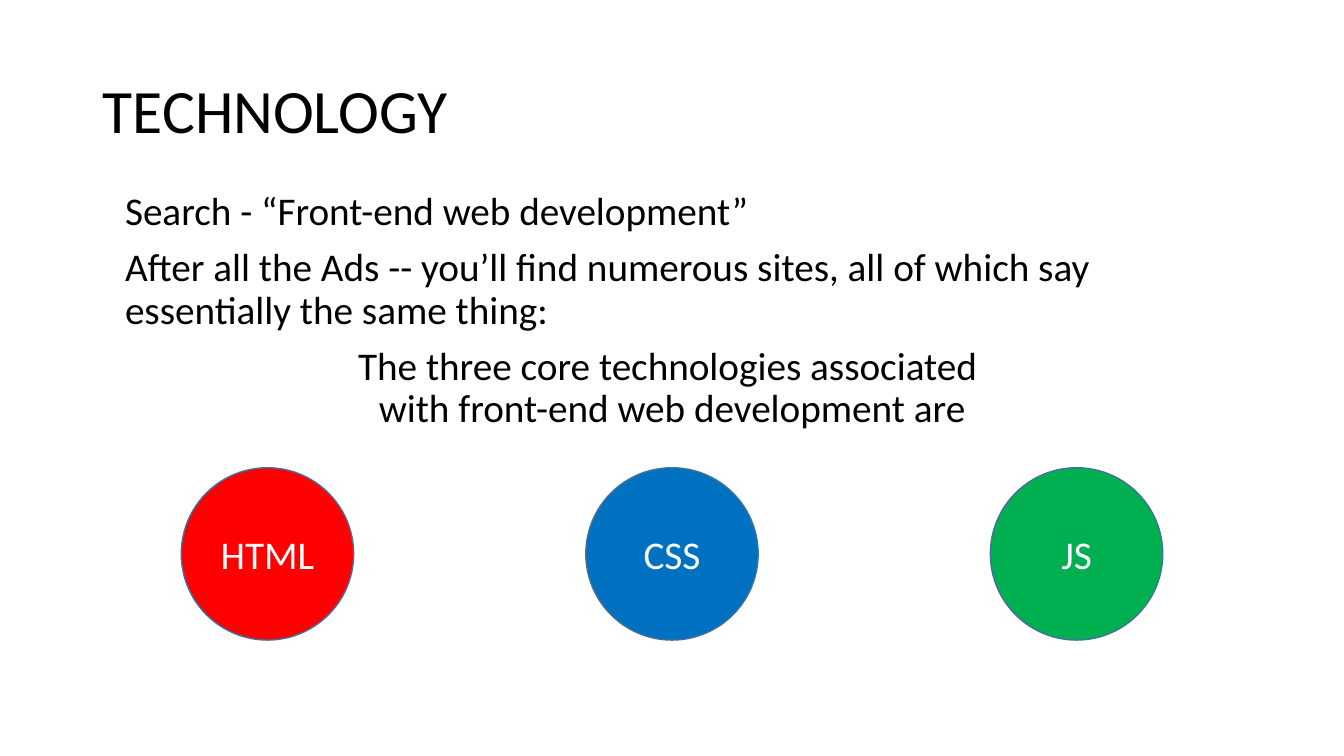
from lxml.etree import SubElement
from pptx import Presentation
from pptx.dml.color import RGBColor
from pptx.enum.shapes import MSO_SHAPE
from pptx.enum.text import MSO_ANCHOR, MSO_AUTO_SIZE, PP_ALIGN
from pptx.oxml.ns import qn
from pptx.util import Inches, Pt

FONT = "Calibri"
BLACK = RGBColor(0x00, 0x00, 0x00)
WHITE = RGBColor(0xFF, 0xFF, 0xFF)
OUTLINE = RGBColor(0x41, 0x71, 0x9C)
RED = RGBColor(0xFF, 0x00, 0x00)
BLUE = RGBColor(0x00, 0x70, 0xC0)
GREEN = RGBColor(0x00, 0xB0, 0x50)

SLIDE_WIDTH, SLIDE_HEIGHT = 13.33, 7.5
TITLE_BOX = (0.92, 0.4, 11.5, 1.45)
BODY_BOX = (1.14, 1.85, 11.05, 4.53)
CIRCLE_ROW = (0, 4.64, SLIDE_WIDTH, 1.71)
CIRCLE_PITCH = 0.301  # share of the row's width

STATEMENTS = [
    ("Search - “Front-end web development”", PP_ALIGN.LEFT),
    ("After all the Ads -- you’ll find numerous sites, all of which say "
     "essentially the same thing:", PP_ALIGN.LEFT),
    ("The three core technologies associated \nwith front-end web development are",
     PP_ALIGN.CENTER),
]
TECHNOLOGIES = [("HTML", RED), ("CSS", BLUE), ("JS", GREEN)]


def place(shape, box):
    shape.left, shape.top, shape.width, shape.height = map(Inches, box)


def write(para, text, size, color, align):
    """Add one run per line, with a line break between lines."""
    para.alignment = align
    for index, line in enumerate(text.split("\n")):
        if index:
            para.add_line_break()
        span = para.add_run()
        span.text = line
        span.font.name = FONT
        span.font.size = Pt(size)
        span.font.color.rgb = color


def fill_title(title, box):
    place(title, box)
    frame = title.text_frame
    frame.auto_size = MSO_AUTO_SIZE.NONE
    frame.vertical_anchor = MSO_ANCHOR.MIDDLE
    para = frame.paragraphs[0]
    para.line_spacing = 0.9
    write(para, "TECHNOLOGY", 44, BLACK, PP_ALIGN.LEFT)


def fill_body(body, box):
    place(body, box)
    frame = body.text_frame
    frame.auto_size = MSO_AUTO_SIZE.NONE
    frame.vertical_anchor = MSO_ANCHOR.TOP
    for index, (text, align) in enumerate(STATEMENTS):
        para = frame.add_paragraph() if index else frame.paragraphs[0]
        para.line_spacing = 0.9
        para.space_before = Pt(10 if index else 0)
        properties = para._p.get_or_add_pPr()
        properties.set("marL", "0")
        properties.set("indent", "0")
        SubElement(properties, qn("a:buNone"))
        write(para, text, 28, BLACK, align)


def add_technology_circles(page, box):
    left, top, width, diameter = box
    middle = (len(TECHNOLOGIES) - 1) / 2
    for index, (label, color) in enumerate(TECHNOLOGIES):
        center = left + width * (0.5 + (index - middle) * CIRCLE_PITCH)
        circle = page.shapes.add_shape(MSO_SHAPE.OVAL, 0, 0, 0, 0)
        place(circle, (center - diameter / 2, top, diameter, diameter))
        circle.shadow.inherit = False
        circle.fill.solid()
        circle.fill.fore_color.rgb = color
        circle.line.color.rgb = OUTLINE
        circle.line.width = Pt(1)
        frame = circle.text_frame
        frame.vertical_anchor = MSO_ANCHOR.MIDDLE
        write(frame.paragraphs[0], label, 28, WHITE, PP_ALIGN.CENTER)


def main():
    deck = Presentation()
    deck.slide_width = Inches(SLIDE_WIDTH)
    deck.slide_height = Inches(SLIDE_HEIGHT)
    page = deck.slides.add_slide(deck.slide_layouts[1])
    fill_title(page.shapes.title, TITLE_BOX)
    fill_body(page.placeholders[1], BODY_BOX)
    add_technology_circles(page, CIRCLE_ROW)
    deck.save("out.pptx")


if __name__ == "__main__":
    main()
